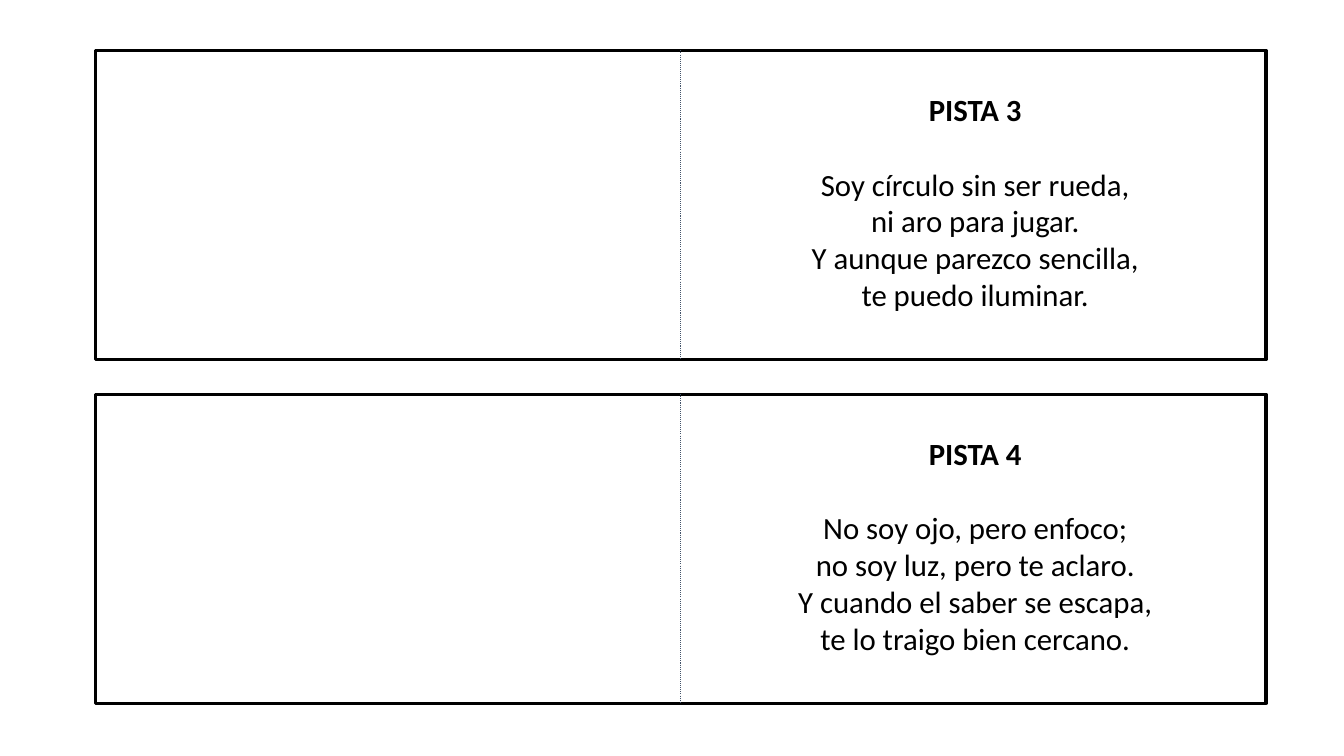
"""Build a slide with two riddle clue cards, each divided by a dotted fold line."""
from dataclasses import dataclass

from lxml.etree import SubElement
from pptx import Presentation
from pptx.dml.color import RGBColor
from pptx.enum.dml import MSO_LINE
from pptx.enum.shapes import MSO_CONNECTOR, MSO_SHAPE
from pptx.enum.text import MSO_ANCHOR, PP_ALIGN
from pptx.oxml.ns import qn
from pptx.util import Pt


@dataclass(frozen=True)
class Theme:
    """Colours, font and sizes shared by the cards."""
    ink: RGBColor = RGBColor(0x00, 0x00, 0x00)
    paper: RGBColor = RGBColor(0xFF, 0xFF, 0xFF)
    fold: RGBColor = RGBColor(0x44, 0x54, 0x6A)
    font: str = "Calibri"
    text_size: float = 22
    heading_gap: float = 26.85
    border_width: float = 2.25
    fold_width: float = 0.75


THEME = Theme()
CARD_LEFT, CARD_TOP = 68.4, 36
CARD_WIDTH, CARD_HEIGHT = 835.92, 220.9
CARD_PITCH = 245.6
TEXT_LEFT, TEXT_OFFSET = 511.2, 21.6
TEXT_WIDTH, TEXT_HEIGHT = 370.8, 173.5
TEXT_INSET = 7.2

CLUES = [
    ("PISTA 3", [
        "Soy círculo sin ser rueda,",
        "ni aro para jugar.",
        "Y aunque parezco sencilla,",
        "te puedo iluminar.",
    ]),
    ("PISTA 4", [
        "No soy ojo, pero enfoco;",
        "no soy luz, pero te aclaro.",
        "Y cuando el saber se escapa,",
        "te lo traigo bien cercano.",
    ]),
]


def add_frame(slide, top):
    """Add the bordered rectangle of a card."""
    frame = slide.shapes.add_shape(
        MSO_SHAPE.RECTANGLE, Pt(CARD_LEFT), Pt(top), Pt(CARD_WIDTH), Pt(CARD_HEIGHT))
    frame.shadow.inherit = False
    frame.fill.solid()
    frame.fill.fore_color.rgb = THEME.paper
    frame.line.color.rgb = THEME.ink
    frame.line.width = Pt(THEME.border_width)
    return frame


def add_line_of_text(paragraph, text, bold=False):
    """Write one centred line into a paragraph."""
    paragraph.alignment = PP_ALIGN.CENTER
    run = paragraph.add_run()
    run.text = text
    run.font.name = THEME.font
    run.font.size = Pt(THEME.text_size)
    run.font.bold = bold
    run.font.color.rgb = THEME.ink


def add_riddle(slide, top, heading, verses):
    """Add the heading and verses on the right half of a card."""
    box = slide.shapes.add_textbox(
        Pt(TEXT_LEFT), Pt(top + TEXT_OFFSET), Pt(TEXT_WIDTH), Pt(TEXT_HEIGHT))
    frame = box.text_frame
    frame.word_wrap = True
    frame.vertical_anchor = MSO_ANCHOR.TOP
    frame.margin_left = frame.margin_right = Pt(TEXT_INSET)
    frame.margin_top = frame.margin_bottom = Pt(TEXT_INSET)
    title = frame.paragraphs[0]
    add_line_of_text(title, heading, bold=True)
    title.space_after = Pt(THEME.heading_gap)
    for verse in verses:
        add_line_of_text(frame.add_paragraph(), verse)


def add_fold(slide, frame):
    """Join the top and bottom middles of a card with a dotted line."""
    middle = frame.left + frame.width // 2
    fold = slide.shapes.add_connector(
        MSO_CONNECTOR.STRAIGHT, middle, frame.top, middle, frame.top + frame.height)
    fold.begin_connect(frame, 0)
    fold.end_connect(frame, 2)
    fold.line.color.rgb = THEME.fold
    fold.line.width = Pt(THEME.fold_width)
    fold.line.dash_style = MSO_LINE.ROUND_DOT
    SubElement(fold._element.spPr, qn("a:effectLst"))


def main():
    """Create the presentation and save it."""
    presentation = Presentation()
    presentation.slide_width, presentation.slide_height = Pt(960), Pt(540)
    slide = presentation.slides.add_slide(presentation.slide_layouts[6])
    for index, (heading, verses) in enumerate(CLUES):
        top = CARD_TOP + index * CARD_PITCH
        frame = add_frame(slide, top)
        add_riddle(slide, top, heading, verses)
        add_fold(slide, frame)
    presentation.save("out.pptx")


if __name__ == "__main__":
    main()
